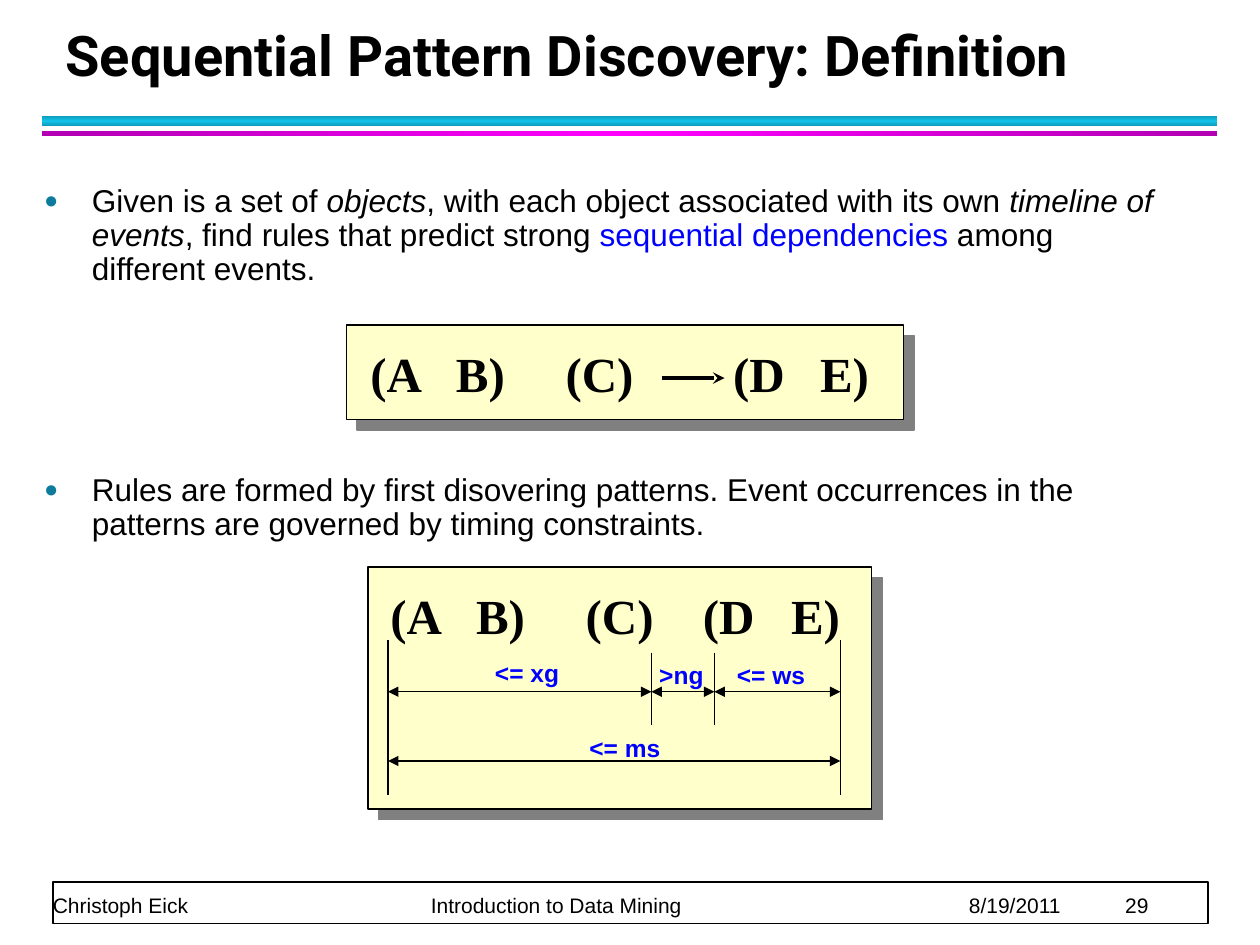
import dataclasses

import pptx
import pptx.dml.color
import pptx.enum.shapes
import pptx.enum.text
import pptx.oxml
import pptx.oxml.ns
import pptx.util


@dataclasses.dataclass(frozen=True)
class Theme:
    """Colours, fonts and type sizes of the slide."""
    ink: str = "000000"
    paper: str = "FFFFFF"
    panel: str = "FFFFCC"
    shadow: str = "808080"
    accent: str = "0000FF"
    bullet: str = "0C7B9C"
    cyan: tuple = ("0E9BBA", "12C2E9")
    magenta: tuple = ("B200B2", "FF00FF")
    sans: str = "Arial"
    serif: str = "Times New Roman"
    heading: str = "Roboto"
    title_size: int = 32
    pattern_size: int = 28
    body_size: int = 18
    label_size: int = 14
    footer_size: int = 12


@dataclasses.dataclass(frozen=True)
class Box:
    """A rectangle on a grid of 120 columns by 90 rows."""
    left: float
    top: float
    width: float
    height: float

    def inner(self, left, top, width, height):
        """Return a box placed relative to this one."""
        return Box(self.left + left, self.top + top, width, height)

    def lengths(self):
        """Return left, top, width and height as slide lengths."""
        return [grid(value) for value in dataclasses.astuple(self)]


THEME = Theme()


def grid(units):
    """Convert grid columns or rows to a slide length."""
    return pptx.util.Inches(round(units / 12, 2))


def color(value):
    """Convert a hexadecimal value to a colour."""
    return pptx.dml.color.RGBColor.from_string(value)


def add_xml(parent, markup):
    """Append drawing markup to an element."""
    wrapper = pptx.oxml.parse_xml(
        "<a:wrapper %s>%s</a:wrapper>" % (pptx.oxml.ns.nsdecls("a"), markup))
    parent.extend(list(wrapper))


def add_run(paragraph, text, size, font=THEME.sans, ink=THEME.ink, bold=False, italic=False):
    """Add one formatted run."""
    run = paragraph.add_run()
    run.text = text
    run.font.name, run.font.size = font, pptx.util.Pt(size)
    run.font.bold, run.font.italic = bold, italic
    run.font.color.rgb = color(ink)


def set_tabs(paragraph, columns):
    """Set left tab stops at the given columns."""
    stops = "".join('<a:tab pos="%d" algn="l"/>' % grid(column) for column in columns)
    add_xml(paragraph._p.get_or_add_pPr(), "<a:tabLst>%s</a:tabLst>" % stops)


def add_rectangle(slide, box, fill, line_width=0):
    """Add a flat rectangle with an optional outline."""
    shape = slide.shapes.add_shape(pptx.enum.shapes.MSO_SHAPE.RECTANGLE, *box.lengths())
    shape.shadow.inherit = False
    shape.fill.solid()
    shape.fill.fore_color.rgb = color(fill)
    if line_width:
        shape.line.color.rgb = color(THEME.ink)
        shape.line.width = pptx.util.Pt(line_width)
    else:
        shape.line.fill.background()
    return shape


def add_panel(slide, box):
    """Add an outlined panel with a hard shadow."""
    shape = add_rectangle(slide, box, THEME.panel, 0.75)
    effects = shape._element.spPr.find(pptx.oxml.ns.qn("a:effectLst"))
    add_xml(effects, '<a:outerShdw blurRad="0" dist="%d" dir="2700000" algn="ctr" rotWithShape="0">'
            '<a:srgbClr val="%s"/></a:outerShdw>' % (pptx.util.Pt(8.5), THEME.shadow))


def add_text(slide, box, text, size, tabs=(), **style):
    """Add one line of bold left-aligned text on the panel colour."""
    shape = slide.shapes.add_textbox(*box.lengths())
    shape.fill.solid()
    shape.fill.fore_color.rgb = color(THEME.panel)
    shape.text_frame.word_wrap = True
    shape.text_frame.margin_right = 0
    paragraph = shape.text_frame.paragraphs[0]
    if tabs:
        set_tabs(paragraph, tabs)
    add_run(paragraph, text, size, bold=True, **style)


def add_pattern(slide, box, consequent):
    """Add the event pattern, its last group starting at a given column."""
    add_text(slide, box, "(A\tB)\t(C)\t(D\tE)", THEME.pattern_size,
             tabs=(8.2, 18.6, consequent, consequent + 8.4), font=THEME.serif)


def add_line(slide, box, start, end, width=0.75, head=None, tail=None):
    """Add a line between two points relative to a box."""
    points = [grid(value) for x, y in (start, end) for value in (box.left + x, box.top + y)]
    line = slide.shapes.add_connector(pptx.enum.shapes.MSO_CONNECTOR.STRAIGHT, *points)
    line.line.color.rgb = color(THEME.ink)
    line.line.width = pptx.util.Pt(width)
    outline = line._element.spPr.find(pptx.oxml.ns.qn("a:ln"))
    for end_name, arrow in (("headEnd", head), ("tailEnd", tail)):
        if arrow:
            add_xml(outline, '<a:%s type="%s"/>' % (end_name, arrow))
    add_xml(line._element.spPr, "<a:effectLst/>")


def add_footer(slide, box):
    """Add the framed footer line."""
    add_rectangle(slide, box, THEME.paper, 1)
    shape = slide.shapes.add_textbox(*box.inner(0, 0, box.width, 3.4).lengths())
    frame = shape.text_frame
    frame.word_wrap = True
    frame.vertical_anchor = pptx.enum.text.MSO_ANCHOR.BOTTOM
    frame.margin_left = frame.margin_top = frame.margin_right = frame.margin_bottom = 0
    paragraph = frame.paragraphs[0]
    paragraph.line_spacing = pptx.util.Pt(20)
    set_tabs(paragraph, (36, 87.3, 102.1))
    add_run(paragraph, "Christoph Eick\tIntroduction to Data Mining\t8/19/2011\t29", THEME.footer_size)


def add_title_rules(slide, box):
    """Add the two gradient bars below the title."""
    for top, height, angle, (edge, middle) in (
            (0, 1, 90, THEME.cyan), (1.5, 0.5, 0, THEME.magenta)):
        shape = add_rectangle(slide, box.inner(0, top, box.width, height), edge)
        shape.fill.gradient()
        shape.fill.gradient_angle = angle
        stops = shape._element.spPr.find(".//" + pptx.oxml.ns.qn("a:gsLst"))
        for stop in list(stops):
            stops.remove(stop)
        for position, value in ((0, edge), (50000, middle), (100000, edge)):
            add_xml(stops, '<a:gs pos="%d"><a:srgbClr val="%s"/></a:gs>' % (position, value))


def fill_title(slide, box):
    """Place and format the title."""
    title = slide.shapes.title
    title.left, title.top, title.width, title.height = box.lengths()
    title.text_frame.vertical_anchor = pptx.enum.text.MSO_ANCHOR.BOTTOM
    title.text_frame.auto_size = pptx.enum.text.MSO_AUTO_SIZE.NONE
    paragraph = title.text_frame.paragraphs[0]
    paragraph.alignment = pptx.enum.text.PP_ALIGN.LEFT
    paragraph.line_spacing = pptx.util.Pt(36)
    add_run(paragraph, "Sequential Pattern Discovery: Definition", THEME.title_size,
            font=THEME.heading, bold=True)


def fill_body(slide, box):
    """Place the bulleted list, leaving room for the rule between its items."""
    body = slide.placeholders[1]
    body.left, body.top, body.width, body.height = box.lengths()
    frame = body.text_frame
    frame.auto_size = pptx.enum.text.MSO_AUTO_SIZE.NONE
    items = (
        (0, (("Given is a set of ", {}), ("objects", {"italic": True}),
             (", with each object associated with its own ", {}),
             ("timeline of events", {"italic": True}),
             (", find rules that predict strong ", {}),
             ("sequential dependencies", {"ink": THEME.accent}),
             (" among different events.", {}))),
        (103, (("Rules are formed by first disovering patterns. Event occurrences in the "
                "patterns are governed by timing constraints.", {}),)))
    for index, (space, runs) in enumerate(items):
        paragraph = frame.add_paragraph() if index else frame.paragraphs[0]
        paragraph.line_spacing = 0.9
        paragraph.space_before, paragraph.space_after = pptx.util.Pt(space), pptx.util.Pt(4)
        properties = paragraph._p.get_or_add_pPr()
        properties.set("marL", str(grid(4.5)))
        properties.set("indent", str(-grid(4.5)))
        add_xml(properties, '<a:buClr><a:srgbClr val="%s"/></a:buClr><a:buSzPct val="75000"/>'
                '<a:buFont typeface="Arial"/><a:buChar char="●"/>' % THEME.bullet)
        for text, style in runs:
            add_run(paragraph, text, THEME.body_size, **style)


def add_rule(slide, box):
    """Add the panel showing a pattern that implies another."""
    add_panel(slide, box)
    add_pattern(slide, box.inner(1.1, 1.2, 50.3, 6.8), 34.5)
    add_line(slide, box, (30, 5), (36, 5), width=2.25, tail="stealth")


def add_timing(slide, box):
    """Add the panel showing the timing constraints of a pattern."""
    add_panel(slide, box)
    add_pattern(slide, box.inner(1, 1.2, 45.6, 6.8), 29.8)
    for text, left, top, width in (("<= ms", 20, 15.25, 9.1), ("<= xg", 11, 8, 8.5),
                                   (" >ng", 26, 8.25, 7.2), ("<= ws", 34, 8.25, 8.9)):
        add_text(slide, box.inner(left, top, width, 4), text, THEME.label_size, ink=THEME.accent)
    marks = (2, 27, 33, 45)
    spans = [(marks[0], marks[-1], 18.5)]
    spans += [(start, end, 11.9) for start, end in zip(marks, marks[1:])]
    for start, end, row in spans:
        add_line(slide, box, (start, row), (end, row), head="triangle", tail="triangle")
    for mark in marks:
        top, bottom = (7, 21.75) if mark in (marks[0], marks[-1]) else (8.2, 15)
        add_line(slide, box, (mark, top), (mark, bottom))


def main():
    """Build and save the slide."""
    presentation = pptx.Presentation()
    presentation.slide_width, presentation.slide_height = grid(120), grid(90)
    slide = presentation.slides.add_slide(presentation.slide_layouts[1])
    add_footer(slide, Box(5, 84, 110, 4))
    add_title_rules(slide, Box(4, 11, 112, 2))
    fill_title(slide, Box(5, 2, 115, 7))
    fill_body(slide, Box(3, 17, 110, 15))
    add_timing(slide, Box(35, 54, 48, 23))
    add_rule(slide, Box(33, 31, 53, 9))
    presentation.save("out.pptx")


if __name__ == "__main__":
    main()
